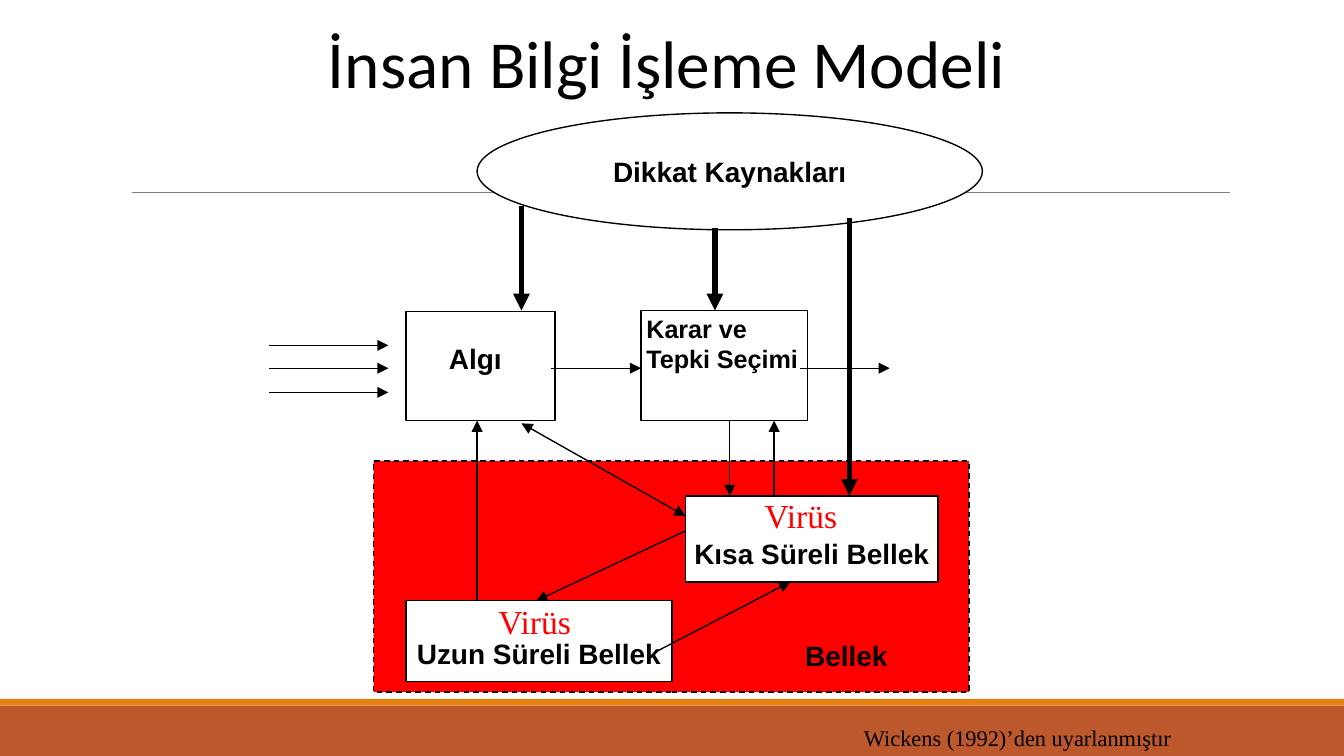
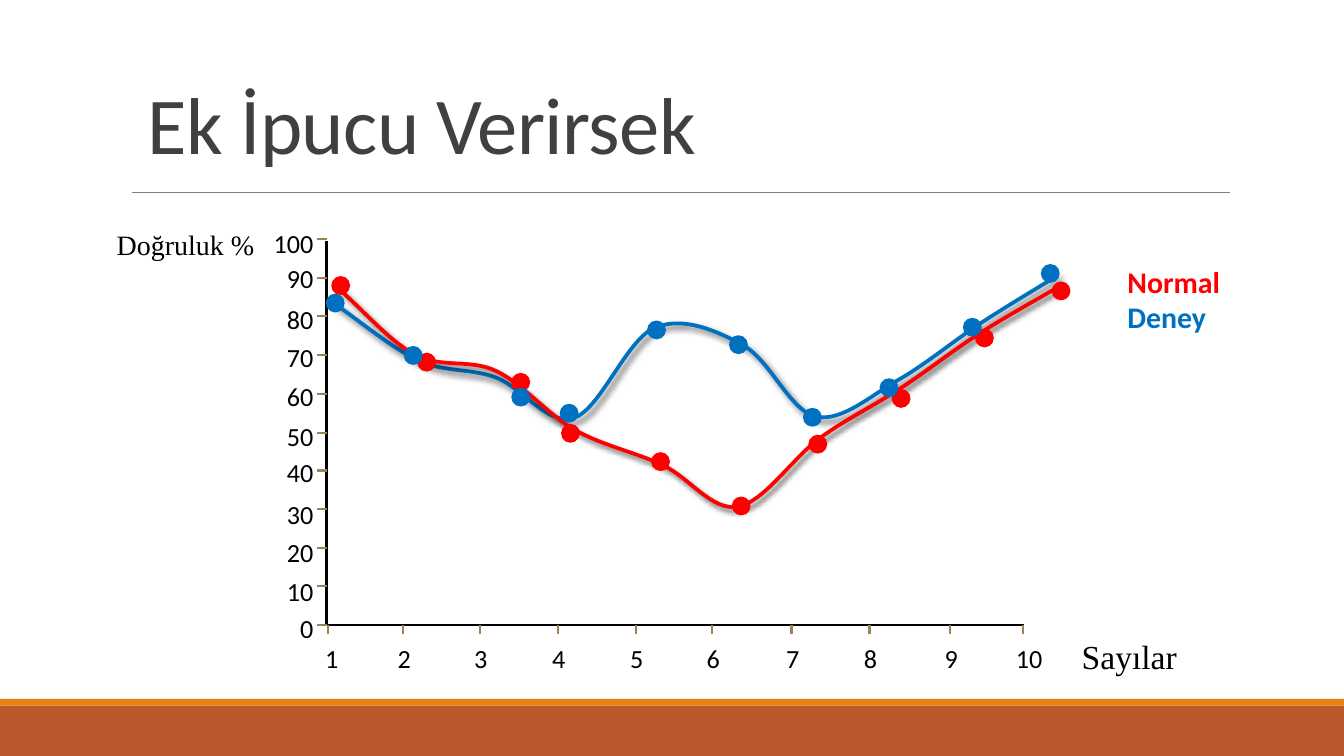
from lxml import etree
from pptx import Presentation
from pptx import util as u
from pptx.dml.color import RGBColor
from pptx.enum import dml, shapes, text
from pptx.oxml.ns import qn

PX = 9144  # EMU per px: the slide is 1000 px wide
BLACK = RGBColor(0x00, 0x00, 0x00)
WHITE = RGBColor(0xFF, 0xFF, 0xFF)
RED = RGBColor(0xFF, 0x00, 0x00)
BLUE = RGBColor(0x00, 0x70, 0xC0)
INK = RGBColor(0x40, 0x40, 0x40)
GREY = RGBColor(0x80, 0x80, 0x80)
TICK = RGBColor(0x9B, 0x83, 0x57)
RUST = RGBColor(0xBD, 0x58, 0x2C)
ORANGE = RGBColor(0xE4, 0x83, 0x12)

RECT, OVAL = shapes.MSO_SHAPE.RECTANGLE, shapes.MSO_SHAPE.OVAL
LEFT, CENTER, RIGHT = text.PP_ALIGN.LEFT, text.PP_ALIGN.CENTER, text.PP_ALIGN.RIGHT
TOP, MIDDLE, BOTTOM = (text.MSO_ANCHOR.TOP, text.MSO_ANCHOR.MIDDLE,
                       text.MSO_ANCHOR.BOTTOM)
FIT = text.MSO_AUTO_SIZE.SHAPE_TO_FIT_TEXT
ARIAL = {"name": "Arial", "size": u.Pt(15), "bold": True}
ARIAL_SMALL = {**ARIAL, "size": u.Pt(13.5)}
TIMES = {"name": "Times New Roman", "size": u.Pt(18)}
AXIS = {"name": "Calibri", "size": u.Pt(14)}
LEGEND = {"name": "Calibri", "size": u.Pt(16), "bold": True}


def draw_box(parent, box, words=(), font=None, kind=None, fill=None, edge=None,
             align=LEFT, anchor=TOP, inset=(10, 5, 10, 5), wrap=True, fit=False):
    """Draw a preset shape, or a text box if no kind is given."""
    place = [n * PX for n in box]
    if kind is None:
        shape = parent.shapes.add_textbox(*place)
    else:
        shape = parent.shapes.add_shape(kind, *place)
        shape.shadow.inherit = False
        shape.fill.solid()
        shape.fill.fore_color.rgb = fill
        if edge is None:
            shape.line.fill.background()
        else:
            shape.line.color.rgb = edge
            shape.line.width = u.Pt(0.75)
    frame = shape.text_frame
    layout = {"word_wrap": wrap, "vertical_anchor": anchor}
    layout.update(zip(("margin_left", "margin_top", "margin_right", "margin_bottom"),
                      (n * PX for n in inset)))
    if fit:
        layout["auto_size"] = FIT
    for key, value in layout.items():
        setattr(frame, key, value)
    for i, (line, color) in enumerate(words):
        paragraph = frame.add_paragraph() if i else frame.paragraphs[0]
        paragraph.alignment = align
        run = paragraph.add_run()
        run.text = line
        run.font.color.rgb = color
        for key, value in font.items():
            setattr(run.font, key, value)
    return shape


def draw_line(parent, ends, color=BLACK, width=0.75, arrows=()):
    """Draw a straight line; arrows lists the ends that carry a head."""
    line = parent.shapes.add_connector(shapes.MSO_CONNECTOR.STRAIGHT,
                                       *(n * PX for n in ends))
    line.line.color.rgb = color
    line.line.width = u.Pt(width)
    properties = line.element.spPr
    for end in arrows:
        etree.SubElement(properties.get_or_add_ln(), qn(f"a:{end}"), type="triangle")
    etree.SubElement(properties, qn("a:effectLst"))
    return line


prs = Presentation()
prs.slide_width = u.Emu(1000 * PX)
prs.slide_height = u.Emu(5143500)
title_only = prs.slide_layouts[5]
for holder in list(title_only.placeholders):
    if holder.placeholder_format.type != shapes.PP_PLACEHOLDER.TITLE:
        holder.element.getparent().remove(holder.element)
model = prs.slides.add_slide(title_only)
accuracy = prs.slides.add_slide(title_only)

# Shared bands and title rule, moved to the layout
shared = [
    draw_box(model, (0, 525, 1000, 38), kind=RECT, fill=RUST),
    draw_box(model, (0, 520, 1000, 5), kind=RECT, fill=ORANGE),
    draw_line(model, (98, 143, 915, 143), GREY, 0.5),
]
for i, part in enumerate(shared):
    part.element.xpath(".//p:cNvPr")[0].set("id", str(20 + i))
    title_only.shapes.element.insert(2 + i, part.element)

# Titles
titles = [
    (model, "İnsan Bilgi İşleme Modeli", (234, 8, 638, 73), 36, BLACK, 1.0, 0),
    (accuracy, "Ek İpucu Verirsek", (100, 57, 525, 75), 43.2, INK, 0.85, -30),
]
for slide, words, box, size, color, spacing, tracking in titles:
    title = slide.shapes.title
    for key, value in zip(("left", "top", "width", "height"), box):
        setattr(title, key, value * PX)
    title.text_frame.text = words
    title.text_frame.auto_size = text.MSO_AUTO_SIZE.NONE
    title.text_frame.vertical_anchor = BOTTOM
    paragraph = title.text_frame.paragraphs[0]
    paragraph.alignment = LEFT
    paragraph.line_spacing = spacing
    run = paragraph.runs[0]
    for key, value in {"name": "Calibri", "size": u.Pt(size)}.items():
        setattr(run.font, key, value)
    run.font.color.rgb = color
    if tracking:
        title.element.xpath(".//a:rPr")[0].set("spc", str(tracking))

# Slide 1: memory area and the vertical flows behind the stages
memory = draw_box(model, (278, 343, 443, 172), kind=RECT, fill=RED, edge=BLACK)
memory.line.dash_style = dml.MSO_LINE.DASH
for x, start, end in ((355, 452, 313), (576, 373, 313), (543, 309, 369)):
    draw_line(model, (x, start, x, end), arrows=["tailEnd"])

# Slide 1: stages of the model
stages = [
    ("Uzun Süreli Bellek", (302, 447, 198, 60), RECT, ARIAL, CENTER, TOP, (4, 27, 4, 2)),
    ("Kısa Süreli Bellek", (510, 369, 188, 64), RECT, ARIAL, CENTER, TOP, (4, 30, 4, 2)),
    ("Algı", (302, 232, 111, 81), RECT, ARIAL, LEFT, TOP, (32, 22, 4, 2)),
    ("Karar ve Tepki Seçimi", (477, 231, 124, 82), RECT, ARIAL_SMALL, LEFT, TOP,
     (4, 2, 4, 2)),
]
for words, box, kind, font, align, anchor, inset in stages:
    draw_box(model, box, [(words, BLACK)], font, kind, WHITE, BLACK, align, anchor, inset)

# Slide 1: flows between the stages
for ends in [(200, y, 289, y) for y in (257, 274, 292)] + [(410, 274, 477, 274),
                                                           (595, 274, 662, 274)]:
    draw_line(model, ends, arrows=["tailEnd"])
draw_box(model, (355, 84, 376, 87), [("Dikkat Kaynakları", BLACK)], ARIAL, OVAL, WHITE,
         BLACK, CENTER, MIDDLE, (4, 2, 4, 2))
for ends in ((510, 395, 399, 447), (488, 485, 588, 433)):
    draw_line(model, ends, arrows=["tailEnd"])
draw_line(model, (510, 384, 388, 315), arrows=["headEnd", "tailEnd"])
for x, start, end in ((388, 153, 231), (532, 170, 231), (632, 162, 369)):
    draw_line(model, (x, start, x, end), width=3, arrows=["tailEnd"])

# Slide 1: free labels
draw_box(model, (595, 473, 125, 34), [("Bellek", BLACK)], ARIAL, inset=(4, 2, 4, 2))
draw_box(model, (633, 534, 252, 30), [("Wickens (1992)’den uyarlanmıştır", BLACK)],
         {**TIMES, "size": u.Pt(12)}, wrap=False, fit=True)
for x, y in ((361, 442), (559, 363)):
    draw_box(model, (x, y, 75, 40), [("Virüs", RED)], TIMES, wrap=False, fit=True)

# Slide 2: axis names
draw_box(accuracy, (77, 164, 124, 35), [("Doğruluk %", BLACK)],
         {**TIMES, "size": u.Pt(15)}, wrap=False, fit=True)
draw_box(accuracy, (795, 468, 92, 40), [("Sayılar", BLACK)], TIMES, wrap=False, fit=True)

# Slide 2: axes, ticks and tick labels
axes = accuracy.shapes.add_group_shape()
draw_line(axes, (243, 179, 243, 466), width=1.25)
draw_line(axes, (244, 465, 762, 465), width=1.25)
percent_tops = (451, 423, 394, 366, 335, 308, 278, 249, 221, 190, 164)
for i, top in enumerate(percent_tops):
    y = round(465 - 28.7 * i)
    draw_line(axes, (236, y, 243, y), TICK, 1.25)
    left = 183 if i < 7 else 200 if i < 10 else 192
    draw_box(axes, (left, top, 243 - left, 34), [(str(10 * i), BLACK)], AXIS,
             align=RIGHT, fit=True)
number_ticks = (244, 300, 357, 415, 473, 530, 589, 647, 707, 761)
number_lefts = (232, 286, 343, 401, 459, 516, 575, 633, 693, 746)
for number, (x, left) in enumerate(zip(number_ticks, number_lefts), 1):
    draw_line(axes, (x, 472, x, 465), TICK, 1.25)
    draw_box(axes, (left, 473, 29 if number < 10 else 41, 29),
             [(str(number), BLACK)], AXIS, fit=True)

# Slide 2: smooth curves, each segment bent along its neighbouring knots
plot = accuracy.shapes.add_group_shape()
curves = [
    (BLUE, [(246, 224), (311, 268), (369, 281), (427, 311), (487, 244), (553, 257),
            (607, 310), (668, 283), (729, 241), (787, 205)]),
    (RED, [(251, 214), (309, 264), (369, 276), (428, 320), (493, 346), (549, 377),
           (610, 326), (670, 289), (729, 248), (790, 212)]),
]
for color, knots in curves:
    builder = plot.shapes.build_freeform(*knots[0], scale=PX)
    builder.add_line_segments(knots[1:], close=False)
    curve = builder.convert_to_shape()
    outline = curve.element.xpath(".//a:path")[0]
    for key in ("w", "h"):
        outline.set(key, str(int(outline.get(key)) * PX))
    origin = [min(values) for values in zip(*knots)]
    for point, value in zip(outline.iter(qn("a:pt")), knots):
        for key, n, start in zip("xy", value, origin):
            point.set(key, str((n - start) * PX))
    before = [2 * a - b for a, b in zip(knots[0], knots[1])]
    after = [2 * a - b for a, b in zip(knots[-1], knots[-2])]
    chain = [before, *knots, after]
    segments = outline.findall(qn("a:lnTo"))
    for segment, p0, p1, p2, p3 in zip(segments, chain, chain[1:], chain[2:], chain[3:]):
        segment.tag = qn("a:cubicBezTo")
        bends = [[b + (c - a) / 6 for a, b, c in zip(p0, p1, p2)],
                 [c - (d - b) / 6 for b, c, d in zip(p1, p2, p3)]]
        for i, bend in enumerate(bends):
            x, y = (str(round((n - start) * PX)) for n, start in zip(bend, origin))
            segment.insert(i, segment.makeelement(qn("a:pt"), {"x": x, "y": y}))
    curve.fill.background()
    curve.line.color.rgb = color
    curve.line.width = u.Pt(2)
    curve.shadow.inherit = False
    effects = curve.element.spPr.find(qn("a:effectLst"))
    shadow = etree.SubElement(effects, qn("a:outerShdw"), blurRad="38100",
                              dist="25400", dir="2700000", algn="tl", rotWithShape="0")
    shade = etree.SubElement(shadow, qn("a:srgbClr"), val="000000")
    etree.SubElement(shade, qn("a:alpha"), val="60000")

# Slide 2: measured dots
dots = [
    (RED, [(247, 206), (311, 263), (381, 278), (418, 316), (485, 337), (545, 370),
           (602, 324), (664, 290), (726, 245), (783, 210)]),
    (BLUE, [(243, 219), (301, 258), (381, 289), (417, 301), (482, 239), (543, 250),
            (598, 304), (655, 282), (717, 237), (775, 197)]),
]
for color, corners in dots:
    for x, y in corners:
        draw_box(plot, (x, y, 13, 13), kind=OVAL, fill=color, edge=color)

# Slide 2: legend
draw_box(accuracy, (829, 191, 115, 64), [("Normal", RED), ("Deney", BLUE)], LEGEND,
         fit=True)

prs.save("out.pptx")
